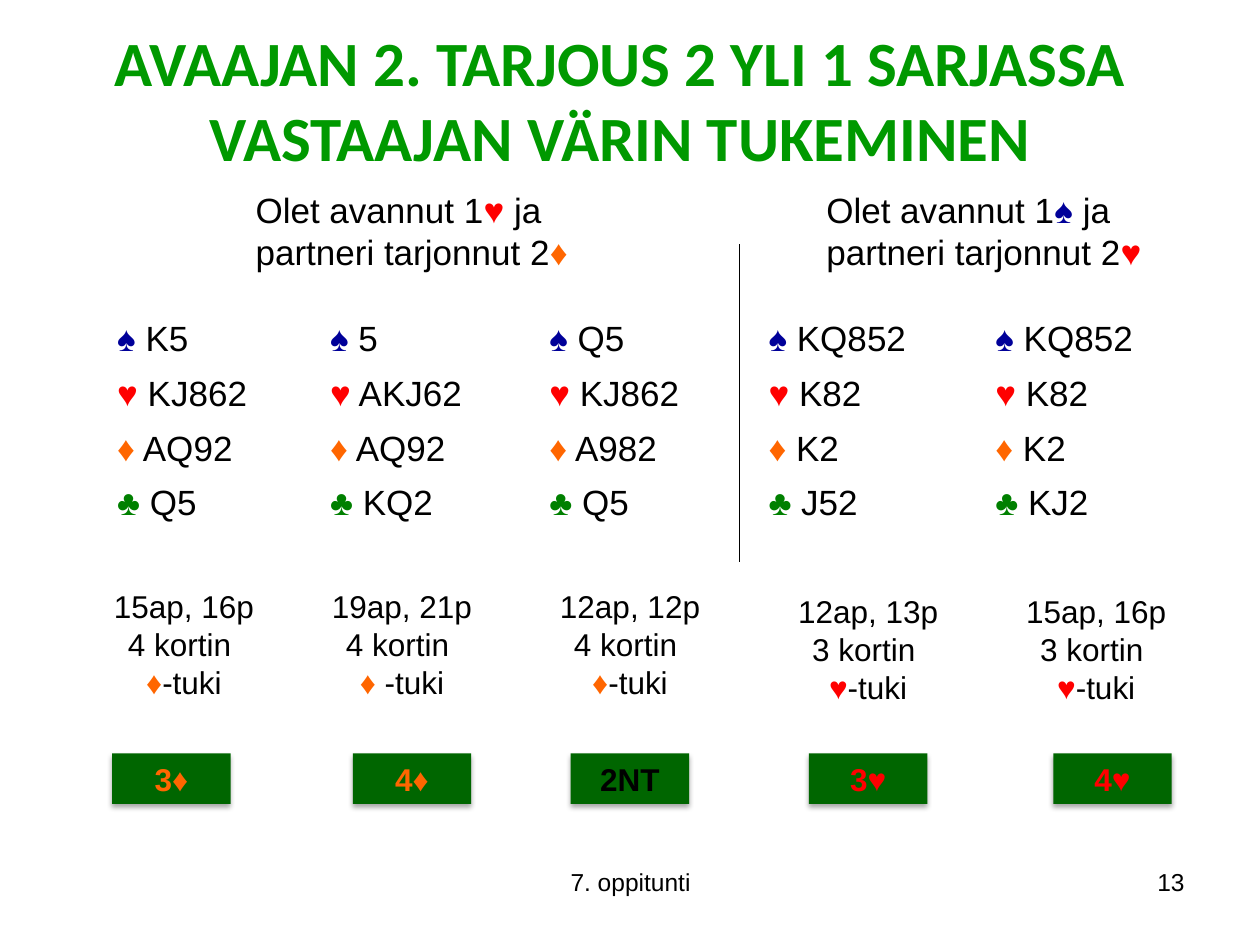
from itertools import groupby

from lxml import etree
from pptx import Presentation
from pptx.dml import color
from pptx.enum import shapes, text
from pptx.oxml import ns
from pptx.util import Inches, Pt

COLORS = {"title": "009900", "box": "006600", "text": "000000",
          "♠": "000099", "♥": "FF0000", "♦": "FF6600", "♣": "008000"}
ALIGN = text.PP_ALIGN
COLUMN_WIDTHS = [1.69, 1.74, 1.74, 1.8, 1.77]
ROW_HEIGHT = 0.43
SUITS = "♠♥♦♣"
HANDS = [
    ["K5", "KJ862", "AQ92", "Q5"],
    ["5", "AKJ62", "AQ92", "KQ2"],
    ["Q5", "KJ862", "A982", "Q5"],
    ["KQ852", "K82", "K2", "J52"],
    ["KQ852", "K82", "K2", "KJ2"],
]
OPENINGS = [
    (1.93, 3.01, "Olet avannut 1♥ ja \vpartneri tarjonnut 2♦"),
    (6.46, 2.85, "Olet avannut 1♠ ja \vpartneri tarjonnut 2♥"),
]
STRENGTHS = [
    (0.75, 4.61, "15ap, 16p\n4 kortin \n♦-tuki"),
    (2.48, 4.61, "19ap, 21p\n4 kortin \n♦ -tuki"),
    (4.29, 4.61, "12ap, 12p\n4 kortin \n♦-tuki"),
    (6.18, 4.65, "12ap, 13p\n3 kortin \n♥-tuki"),
    (7.99, 4.65, "15ap, 16p\n3 kortin \n♥-tuki"),
]
BIDS = [(0.89, "3♦"), (2.8, "4♦"), (4.53, "2NT"), (6.42, "3♥"), (8.36, "4♥")]


def rgb(name):
    return color.RGBColor.from_string(COLORS[name])


def add_run(p, content, size, name, font="Arial", bold=False):
    r = p.add_run()
    r.text = content
    r.font.size = Pt(size)
    r.font.name = font
    r.font.bold = bold
    r.font.color.rgb = rgb(name)


def write(tf, content, size, align=ALIGN.LEFT, base="text", **style):
    for i, line in enumerate(content.split("\n")):
        p = tf.add_paragraph() if i else tf.paragraphs[0]
        p.alignment = align
        for name, chars in groupby(line, lambda c: c if c in COLORS or c == "\v" else base):
            if name == "\v":
                p.add_line_break()
            else:
                add_run(p, "".join(chars), size, name, **style)


def add_text(s, box, content, size, anchor=text.MSO_ANCHOR.TOP, **style):
    sp = s.shapes.add_textbox(*map(Inches, box))
    tf = sp.text_frame
    tf.word_wrap = True
    tf.vertical_anchor = anchor
    write(tf, content, size, **style)


def add_effects(sp):
    return etree.SubElement(sp._element.spPr, ns.qn("a:effectLst"))


def add_shadow(sp):
    shadow = etree.SubElement(add_effects(sp), ns.qn("a:outerShdw"),
                              blurRad=str(Pt(3.1)), dist=str(Pt(1.8)),
                              dir="5400000", rotWithShape="0")
    clr = etree.SubElement(shadow, ns.qn("a:srgbClr"), val=COLORS["text"])
    etree.SubElement(clr, ns.qn("a:alpha"), val="35000")


def add_hands(s, left, top):
    table = s.shapes.add_table(len(SUITS), len(HANDS), Inches(left), Inches(top),
                               Inches(sum(COLUMN_WIDTHS)),
                               Inches(ROW_HEIGHT * len(SUITS))).table
    table.first_row = table.horz_banding = False
    for row in table.rows:
        row.height = Inches(ROW_HEIGHT)
    for col, (width, hand) in enumerate(zip(COLUMN_WIDTHS, HANDS)):
        table.columns[col].width = Inches(width)
        for row, (suit, cards) in enumerate(zip(SUITS, hand)):
            cell = table.cell(row, col)
            cell.fill.background()
            write(cell.text_frame, f"{suit} {cards}", 20, align=ALIGN.JUSTIFY)


def add_divider(s, x, top, bottom):
    line = s.shapes.add_connector(shapes.MSO_CONNECTOR.STRAIGHT, Inches(x), Inches(top),
                                  Inches(x), Inches(bottom))
    line.line.color.rgb = rgb("text")
    line.line.width = Pt(0.75)
    add_effects(line)


def add_bid(s, box, bid):
    sp = s.shapes.add_shape(shapes.MSO_SHAPE.RECTANGLE, *map(Inches, box))
    sp.fill.solid()
    sp.fill.fore_color.rgb = rgb("box")
    sp.line.fill.background()
    add_shadow(sp)
    base = bid[-1] if bid[-1] in SUITS else "text"
    write(sp.text_frame, bid, 18, align=ALIGN.CENTER, base=base, bold=True)


def main():
    prs = Presentation()
    prs.slide_width, prs.slide_height = Inches(10), Inches(7.5)
    s = prs.slides.add_slide(prs.slide_layouts[6])
    add_text(s, (0.51, 0.13, 8.82, 1.31),
             "AVAAJAN 2. TARJOUS 2 YLI 1 SARJASSA VASTAAJAN VÄRIN TUKEMINEN", 36,
             anchor=text.MSO_ANCHOR.MIDDLE, align=ALIGN.CENTER, base="title",
             font="Calibri", bold=True)
    add_hands(s, 0.83, 2.49)
    for left, width, opening in OPENINGS:
        add_text(s, (left, 1.45, width, 0.77), opening, 20)
    add_divider(s, 5.87, 1.94, 4.46)
    for left, top, strength in STRENGTHS:
        add_text(s, (left, top, 1.42, 1.04), strength, 18, align=ALIGN.CENTER)
    for left, bid in BIDS:
        add_bid(s, (left, 5.98, 0.94, 0.4), bid)
    add_text(s, (3.42, 6.83, 3.17, 0.52), "7. oppitunti", 14, align=ALIGN.CENTER)
    add_text(s, (7.17, 6.83, 2.33, 0.52), "13", 14, align=ALIGN.RIGHT)
    prs.save("out.pptx")


if __name__ == "__main__":
    main()
